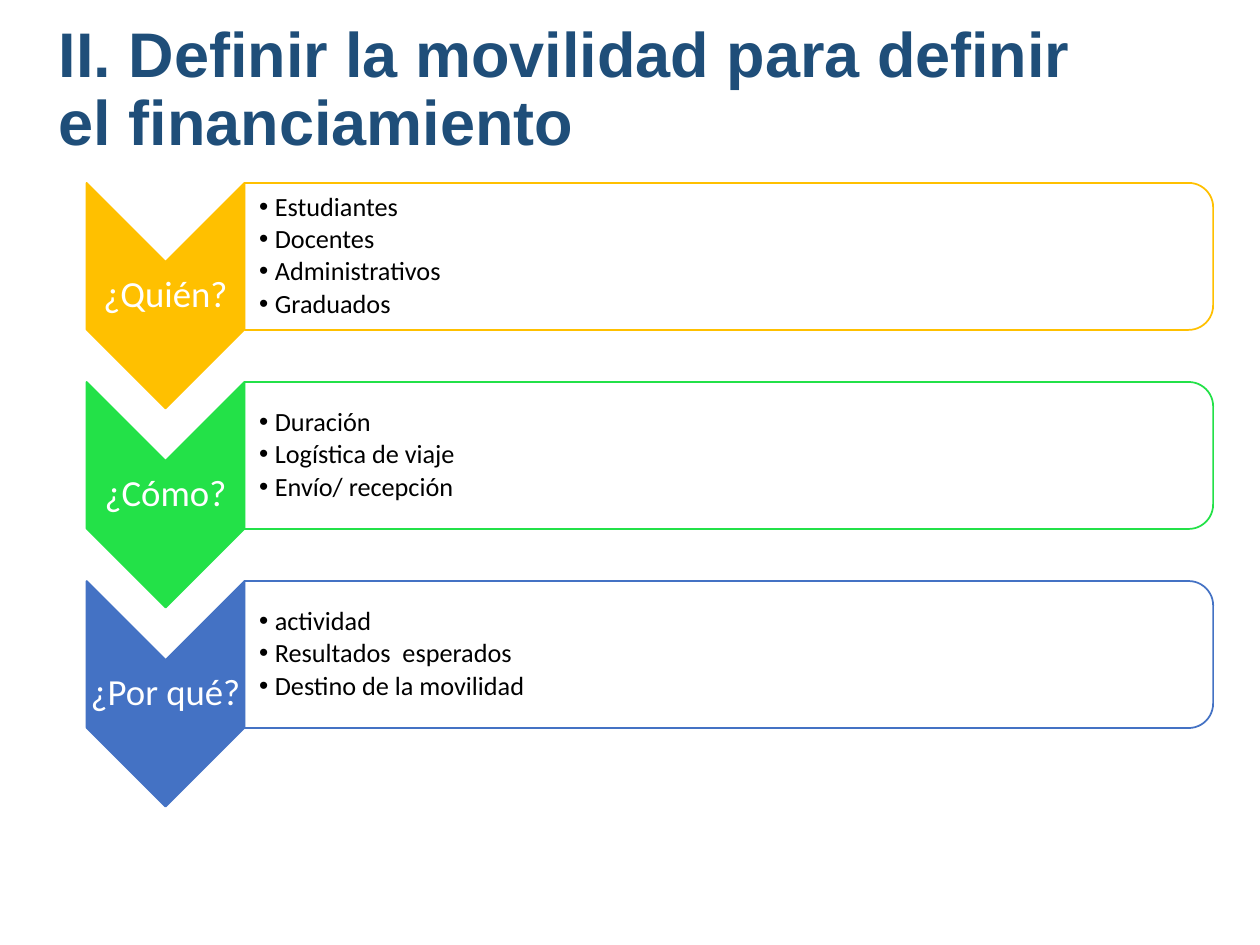
from pptx import Presentation
from pptx.dml.color import RGBColor
from pptx.enum.shapes import MSO_SHAPE
from pptx.enum.text import MSO_ANCHOR, PP_ALIGN
from pptx.oxml.ns import qn
from pptx.util import Pt
from lxml.etree import SubElement

NAVY = RGBColor(0x1F, 0x4E, 0x79)
AMBER = RGBColor(0xFF, 0xC0, 0x00)
GREEN = RGBColor(0x23, 0xE1, 0x48)
BLUE = RGBColor(0x44, 0x72, 0xC4)
WHITE = RGBColor(0xFF, 0xFF, 0xFF)
BLACK = RGBColor(0x00, 0x00, 0x00)

QUESTIONS = [
    ("¿Quién?", AMBER, ["Estudiantes", "Docentes", "Administrativos", "Graduados"]),
    ("¿Cómo?", GREEN, ["Duración", "Logística de viaje", "Envío/ recepción"]),
    ("¿Por qué?", BLUE, ["actividad", "Resultados  esperados", "Destino de la movilidad"]),
]
FIRST_TOP = 104.5
ROW_PITCH = 113.76


class QuestionSlide:
    """Styled slide with a title and a chevron list of questions."""

    heading_font = "Arial"
    body_font = "Calibri"
    inset = 0.7
    indent = 9

    def __init__(self, deck):
        self.slide = deck.slides.add_slide(deck.slide_layouts[6])
        self.diagram = self.slide.shapes.add_group_shape().shapes

    def text_frame(self, shapes, left, top, width, height, insets):
        frame = shapes.add_textbox(Pt(left), Pt(top), Pt(width), Pt(height)).text_frame
        frame.word_wrap = True
        frame.vertical_anchor = MSO_ANCHOR.MIDDLE
        frame.margin_left, frame.margin_top, frame.margin_right, frame.margin_bottom = map(Pt, insets)
        return frame

    def add_words(self, paragraph, words, font, size, color, bold=False, after=0):
        paragraph.line_spacing = 0.9
        paragraph.space_after = Pt(after)
        run = paragraph.add_run()
        run.text = words
        run.font.name = font
        run.font.size = Pt(size)
        run.font.bold = bold
        run.font.color.rgb = color

    def title(self, words):
        frame = self.text_frame(self.slide.shapes, 26.6, 0, 620.6, 104.4, (7.2, 3.6, 7.2, 3.6))
        self.add_words(frame.paragraphs[0], words, self.heading_font, 36, NAVY, bold=True)

    def turned_shape(self, preset, left, top, width, height, fill, line):
        shift = (width - height) / 2
        shape = self.diagram.add_shape(
            preset, Pt(left + shift), Pt(top - shift), Pt(height), Pt(width))
        shape.rotation = 90
        shape.shadow.inherit = False
        shape.fill.solid()
        shape.fill.fore_color.rgb = fill
        shape.line.color.rgb = line
        shape.line.width = Pt(1)
        return shape

    def chevron(self, top, question, color):
        self.turned_shape(MSO_SHAPE.CHEVRON, 49.5, top, 90.2, 128.9, color, color)
        frame = self.text_frame(self.diagram, 49.5, top + 45.2, 90.2, 38.7, [self.inset] * 4)
        label = frame.paragraphs[0]
        label.alignment = PP_ALIGN.CENTER
        self.add_words(label, question, self.body_font, 21, WHITE, after=7.35)

    def answer_panel(self, top, answers, color):
        panel = self.turned_shape(
            MSO_SHAPE.ROUND_2_SAME_RECTANGLE, 139.7, top, 553.5, 84, WHITE, color)
        tint = panel._element.spPr.find(qn("a:solidFill"))[0]
        SubElement(tint, qn("a:alpha"), val="90000")
        frame = self.text_frame(
            self.diagram, 139.7, top + 4.1, 549.4, 75.8, (8.4, self.inset, self.inset, self.inset))
        for index, answer in enumerate(answers):
            item = frame.add_paragraph() if index else frame.paragraphs[0]
            item.level = 1
            properties = item._p.get_or_add_pPr()
            properties.set("marL", str(Pt(self.indent)))
            properties.set("indent", str(-Pt(self.indent)))
            SubElement(properties, qn("a:buFont"), typeface=self.heading_font)
            SubElement(properties, qn("a:buChar"), char="•")
            self.add_words(item, answer, self.body_font, 15, BLACK, after=2.25)


def main():
    deck = Presentation()
    deck.slide_width = Pt(720)
    deck.slide_height = Pt(540)
    page = QuestionSlide(deck)
    page.title("II. Definir la movilidad para definir el financiamiento")
    for row, (question, color, answers) in enumerate(QUESTIONS):
        top = FIRST_TOP + row * ROW_PITCH
        page.chevron(top, question, color)
        page.answer_panel(top, answers, color)
    deck.save("out.pptx")


if __name__ == "__main__":
    main()
